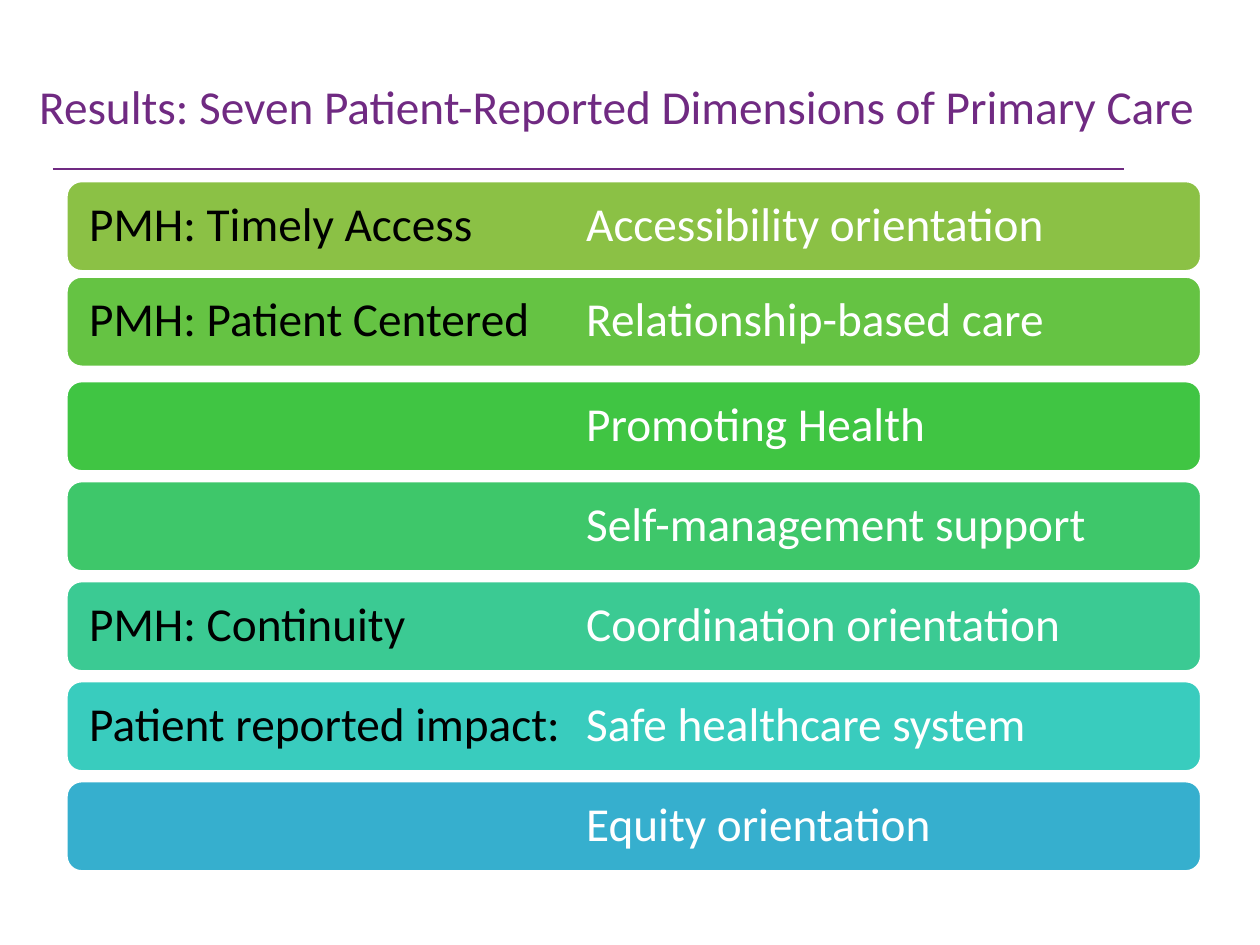
"""Build a slide listing seven patient-reported dimensions of primary care."""
from dataclasses import dataclass

from lxml import etree
from pptx import Presentation
from pptx.dml.color import RGBColor
from pptx.enum.shapes import MSO_CONNECTOR, MSO_SHAPE
from pptx.enum.text import MSO_ANCHOR, PP_ALIGN
from pptx.oxml.ns import qn
from pptx.slide import Slide
from pptx.text.text import Font
from pptx.util import Pt

STRAIGHT = MSO_CONNECTOR.STRAIGHT
ROUNDED = MSO_SHAPE.ROUNDED_RECTANGLE
MIDDLE = MSO_ANCHOR.MIDDLE
LEFT = PP_ALIGN.LEFT

PURPLE, BLACK, WHITE = "702A82", "000000", "FFFFFF"
BAR_LEFT, BAR_WIDTH, BAR_HEIGHT = 38.2, 648, 51.1
FIRST_TOP, BAR_PITCH = 103.7, 57.15
BAR_INSET, DIMENSION_TAB = 10.3, 284


@dataclass
class Bar:
    label: str
    dimension: str
    fill: str
    shift: float = 0


BARS = [
    Bar("PMH: Timely Access", "Accessibility orientation", "8BC145"),
    Bar("PMH: Patient Centered", "Relationship-based care", "65C343", -2.6),
    Bar("", "Promoting Health", "40C543"),
    Bar("", "Self-management support", "3EC76A"),
    Bar("PMH: Continuity", "Coordination orientation", "3BCA93"),
    Bar("Patient reported impact:", "Safe healthcare system", "39CCBE"),
    Bar("", "Equity orientation", "36AFCE"),
]


def color(value: str) -> RGBColor:
    return RGBColor.from_string(value)


def format_font(font: Font, value: str) -> None:
    font.name = "Calibri"
    font.size = Pt(27)
    font.color.rgb = color(value)


def draw_title(slide: Slide, text: str) -> None:
    shape = slide.shapes.add_textbox(Pt(15.3), Pt(30.2), Pt(692.6), Pt(64.8))
    text_frame = shape.text_frame
    text_frame.word_wrap = True
    text_frame.vertical_anchor = MIDDLE
    text_frame.text = text
    paragraph = text_frame.paragraphs[0]
    paragraph.line_spacing = 0.9
    format_font(paragraph.runs[0].font, PURPLE)


def draw_rule(slide: Slide) -> None:
    connector = slide.shapes.add_connector(
        STRAIGHT, Pt(30.2), Pt(96.5), Pt(642.2), Pt(96.5))
    connector.line.color.rgb = color(PURPLE)
    connector.line.width = Pt(1)
    properties = connector._element.find(qn("p:spPr"))
    etree.SubElement(properties, qn("a:effectLst"))


def draw_bar(slide: Slide, bar: Bar, top: float) -> None:
    shape = slide.shapes.add_shape(
        ROUNDED, Pt(BAR_LEFT), Pt(top), Pt(BAR_WIDTH), Pt(BAR_HEIGHT))
    shape.shadow.inherit = False
    shape.fill.solid()
    shape.fill.fore_color.rgb = color(bar.fill)
    shape.line.color.rgb = color(WHITE)
    shape.line.width = Pt(1)

    text_frame = shape.text_frame
    text_frame.word_wrap = True
    text_frame.vertical_anchor = MIDDLE
    text_frame.margin_left = text_frame.margin_right = Pt(BAR_INSET)
    paragraph = text_frame.paragraphs[0]
    tabs = etree.SubElement(
        paragraph._p.get_or_add_pPr(), qn("a:tabLst"))
    etree.SubElement(
        tabs, qn("a:tab"), pos=str(Pt(DIMENSION_TAB)), algn="l")
    paragraph.alignment = LEFT
    paragraph.line_spacing = 0.9

    paragraph.text = bar.label
    for run in paragraph.runs:
        format_font(run.font, BLACK)
    dimension_run = paragraph.add_run()
    dimension_run.text = f"\t{bar.dimension}"
    format_font(dimension_run.font, WHITE)


def main() -> None:
    presentation = Presentation()
    presentation.slide_width = Pt(720)
    presentation.slide_height = Pt(540)
    slide = presentation.slides.add_slide(presentation.slide_layouts[6])
    draw_rule(slide)
    draw_title(
        slide, "Results: Seven Patient-Reported Dimensions of Primary Care")
    for index, bar in enumerate(BARS):
        draw_bar(slide, bar, FIRST_TOP + index * BAR_PITCH + bar.shift)
    presentation.save("out.pptx")


if __name__ == "__main__":
    main()
